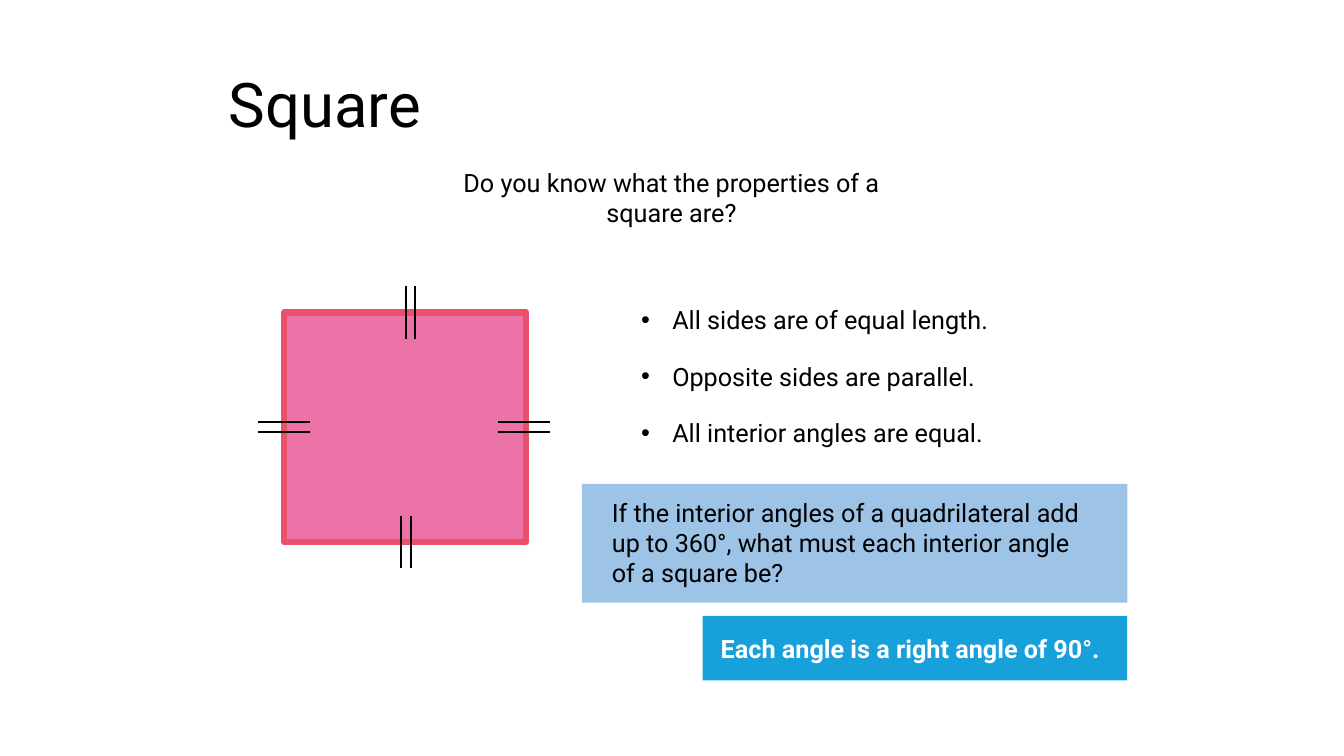
from lxml import etree
from pptx import Presentation
from pptx.dml.color import RGBColor
from pptx.enum.shapes import MSO_CONNECTOR, MSO_SHAPE
from pptx.enum.text import MSO_ANCHOR, PP_ALIGN
from pptx.oxml.ns import qn
from pptx.util import Inches, Pt

RECT = MSO_SHAPE.RECTANGLE
STRAIGHT = MSO_CONNECTOR.STRAIGHT
MIDDLE, TOP = MSO_ANCHOR.MIDDLE, MSO_ANCHOR.TOP
LEFT, CENTER = PP_ALIGN.LEFT, PP_ALIGN.CENTER

BLACK = RGBColor(0x00, 0x00, 0x00)
WHITE = RGBColor(0xFF, 0xFF, 0xFF)
PINK = RGBColor(0xEC, 0x73, 0xA8)
RED = RGBColor(0xE9, 0x50, 0x6C)
PALE_BLUE = RGBColor(0x9D, 0xC3, 0xE6)
BLUE = RGBColor(0x18, 0xA0, 0xDB)


class SlideBuilder:
    """Draws on one slide; all lengths are percentages of its width and height."""

    font = "Roboto"
    size = 18
    indent = Inches(0.31)

    def __init__(self, prs):
        self.slide = prs.slides.add_slide(prs.slide_layouts[6])
        self.width, self.height = prs.slide_width, prs.slide_height

    def x(self, share):
        return round(self.width * share / 100)

    def y(self, share):
        return round(self.height * share / 100)

    def box(self, left, top, width, height):
        return self.x(left), self.y(top), self.x(width), self.y(height)

    def text(self, at, text, size=size, color=BLACK, bold=False,
             align=LEFT, anchor=TOP, spacing=1.0, bullet=False):
        tf = self.slide.shapes.add_textbox(*self.box(*at)).text_frame
        tf.word_wrap = True
        tf.vertical_anchor = anchor
        p = tf.paragraphs[0]
        p.alignment = align
        p.line_spacing = spacing
        if bullet:
            pPr = p._p.get_or_add_pPr()
            pPr.set("marL", str(self.indent))
            pPr.set("indent", str(-self.indent))
            etree.SubElement(pPr, qn("a:buFont"), typeface="Arial")
            etree.SubElement(pPr, qn("a:buChar"), char="•")
        r = p.add_run()
        r.text = text
        r.font.name = self.font
        r.font.size = Pt(size)
        r.font.bold = bold
        r.font.color.rgb = color

    def rect(self, at, fill, line=None, weight=0):
        sp = self.slide.shapes.add_shape(RECT, *self.box(*at))
        sp.shadow.inherit = False
        sp.fill.solid()
        sp.fill.fore_color.rgb = fill
        if line is None:
            sp.line.fill.background()
        else:
            sp.line.color.rgb = line
            sp.line.width = Pt(weight)

    def line(self, x1, y1, x2, y2):
        cxn = self.slide.shapes.add_connector(
            STRAIGHT, self.x(x1), self.y(y1), self.x(x2), self.y(y2))
        cxn.line.color.rgb = BLACK
        cxn.line.width = Pt(1.5)
        etree.SubElement(cxn._element.spPr, qn("a:effectLst"))

    def equal_marks(self, left, top, upright):
        """Two parallel ticks that mark a side as equal to the others."""
        length_x, length_y = 3.9, 6.93
        gap_x, gap_y = 0.73, 1.33
        for i in range(2):
            if upright:
                x = left + i * gap_x
                self.line(x, top, x, top + length_y)
            else:
                y = top + i * gap_y
                self.line(left, y, left + length_x, y)


def main():
    prs = Presentation()
    prs.slide_width, prs.slide_height = Inches(13.33), Inches(7.5)
    s = SlideBuilder(prs)

    s.text((16.28, 6.93, 67.44, 14.53), "Square", size=44, anchor=MIDDLE, spacing=0.9)
    s.text((31.21, 21.47, 37.51, 9.47),
           "Do you know what the properties of a square are?", align=CENTER)

    s.rect((21.16, 41.33, 18, 30.4), PINK, RED, 4.5)
    for left, top, upright in [(37.06, 55.87, False), (19.2, 55.87, False),
                               (29.83, 68.8 - 0.53, True), (30.18, 37.87, True)]:
        s.equal_marks(left, top, upright)

    properties = ["All sides are of equal length.",
                  "Opposite sides are parallel.",
                  "All interior angles are equal."]
    for i, prop in enumerate(properties):
        s.text((46.96, 39.6 + i * 7.47, 28.3, 5.33), prop, bullet=True)

    s.rect((43.29, 64, 40.59, 15.73), PALE_BLUE)
    s.text((44.79, 65.07, 37.51, 13.47),
           "If the interior angles of a quadrilateral add up to 360°, "
           "what must each interior angle of a square be?")

    s.rect((52.29, 81.47, 31.58, 8.53), BLUE)
    s.text((52.89, 83.07, 31.58, 5.33),
           "Each angle is a right angle of 90°.", color=WHITE, bold=True)

    prs.save("out.pptx")


if __name__ == "__main__":
    main()
